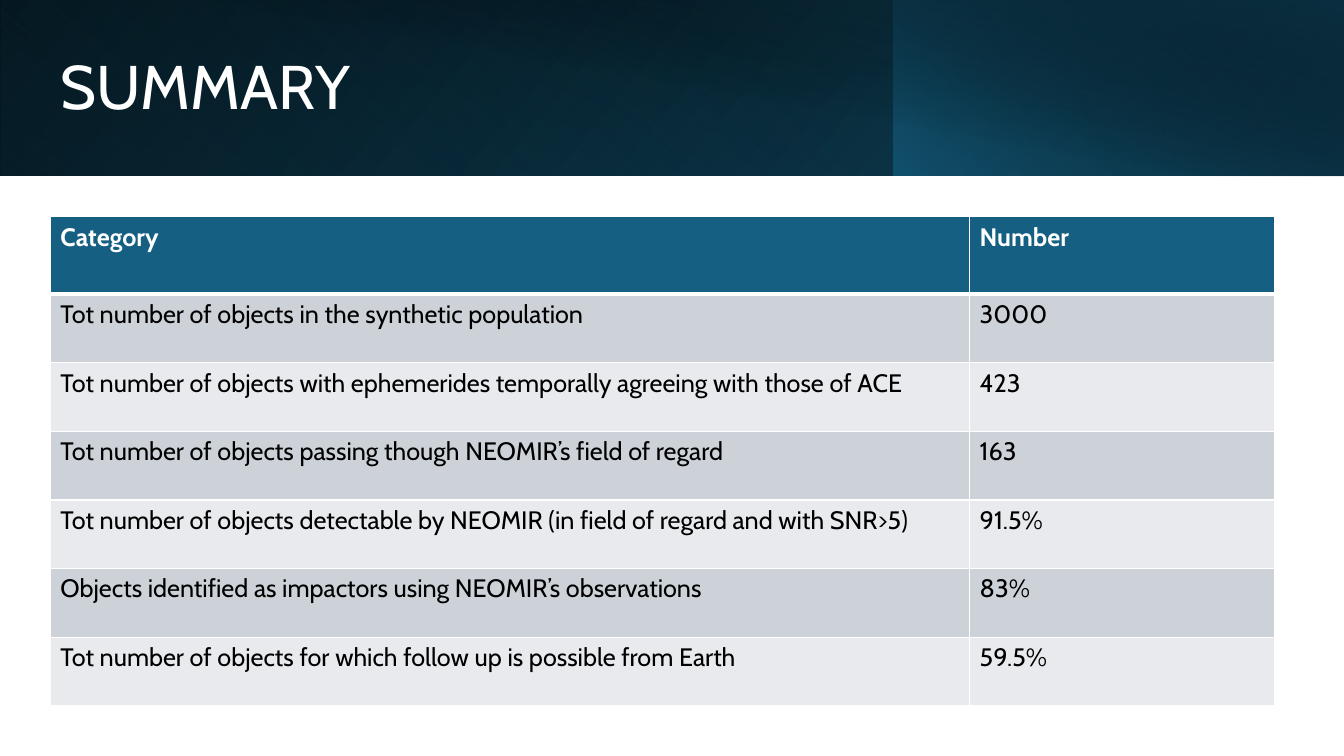
from dataclasses import dataclass

from lxml.etree import SubElement
from pptx import Presentation
from pptx.dml.color import RGBColor
from pptx.enum.shapes import MSO_SHAPE
from pptx.enum.text import MSO_ANCHOR, MSO_AUTO_SIZE, PP_ALIGN
from pptx.oxml.ns import qn
from pptx.slide import Slide
from pptx.table import _Cell
from pptx.text.text import _Paragraph
from pptx.util import Pt

FONT = "Cabin"
WHITE = RGBColor(0xFF, 0xFF, 0xFF)
BLACK = RGBColor(0x00, 0x00, 0x00)
TEAL = RGBColor(0x15, 0x60, 0x82)
DEEP = RGBColor(0x10, 0x48, 0x62)
NAVY = RGBColor(0x0B, 0x30, 0x41)
GRAY = RGBColor(0xCC, 0xD2, 0xD8)
PALE = RGBColor(0xE8, 0xEA, 0xED)


@dataclass
class Stop:
    place: int
    color: RGBColor
    alpha: int = 100


@dataclass
class Band:
    left: float
    width: float
    height: float
    angle: int
    stops: tuple[Stop, Stop]
    turn: int = 0
    flip: bool = True


@dataclass
class Row:
    label: str
    value: str


BANDS = [
    Band(0, 960, 125.3, 140, (Stop(0, BLACK), Stop(100, DEEP))),
    Band(0, 639.4, 125.3, 230, (Stop(20, TEAL, 0), Stop(100, NAVY, 55)), turn=180),
    Band(638.6, 321.4, 125.3, 220, (Stop(0, TEAL, 66), Stop(100, BLACK, 30))),
    Band(36, 924, 126, 280, (Stop(50, BLACK, 0), Stop(99, NAVY, 52)), flip=False),
]

ROWS = [
    Row("Category", "Number"),
    Row("Tot number of objects in the synthetic population", "3000"),
    Row("Tot number of objects with ephemerides temporally agreeing with those of ACE", "423"),
    Row("Tot number of objects passing though NEOMIR’s field of regard", "163"),
    Row("Tot number of objects detectable by NEOMIR (in field of regard and with SNR>5)", "91.5%"),
    Row("Objects identified as impactors using NEOMIR’s observations", "83%"),
    Row("Tot number of objects for which follow up is possible from Earth", "59.5%"),
]


def style(para: _Paragraph, size: int, color: RGBColor, bold: bool = False) -> None:
    for run in para.runs:
        run.font.name = FONT
        run.font.size = Pt(size)
        run.font.bold = bold
        run.font.color.rgb = color


def draw_band(slide: Slide, band: Band) -> None:
    shape = slide.shapes.add_shape(
        MSO_SHAPE.RECTANGLE, Pt(band.left), 0, Pt(band.width), Pt(band.height))
    shape.shadow.inherit = False
    shape.line.fill.background()
    shape.rotation = band.turn
    props = shape.element.spPr
    if band.flip:
        props.find(qn("a:xfrm")).set("flipH", "1")

    # Gradient with opacity at each stop
    grad = props.makeelement(qn("a:gradFill"), {"rotWithShape": "1"})
    props.find(qn("a:prstGeom")).addnext(grad)
    stops = SubElement(grad, qn("a:gsLst"))
    for stop in band.stops:
        node = SubElement(stops, qn("a:gs"), pos=str(stop.place * 1000))
        color = SubElement(node, qn("a:srgbClr"), val=str(stop.color))
        SubElement(color, qn("a:alpha"), val=str(stop.alpha * 1000))
    SubElement(grad, qn("a:lin"), ang=str(band.angle * 60000), scaled="0")


def draw_title(slide: Slide, text: str) -> None:
    title = slide.shapes.title
    title.left, title.top = Pt(36), Pt(23)
    title.width, title.height = Pt(851), Pt(81.4)
    frame = title.text_frame
    frame.text = text
    frame.auto_size = MSO_AUTO_SIZE.NONE
    frame.vertical_anchor = MSO_ANCHOR.MIDDLE
    para = frame.paragraphs[0]
    para.alignment = PP_ALIGN.LEFT
    para.line_spacing = 0.9
    style(para, 44, WHITE)
    # Bring the title in front of the bands
    title.element.getparent().append(title.element)


def draw_edges(cell: _Cell, head: bool) -> None:
    edges = {"lnL": 1, "lnR": 1, "lnT": 1, "lnB": 3} if head else {"lnL": 1, "lnR": 1, "lnB": 1}
    props = cell._tc.get_or_add_tcPr()
    for side, width in edges.items():
        line = SubElement(props, qn(f"a:{side}"), w=str(Pt(width)))
        fill = SubElement(line, qn("a:solidFill"))
        SubElement(fill, qn("a:srgbClr"), val=str(WHITE))


def draw_table(slide: Slide, rows: list[Row]) -> None:
    frame = slide.shapes.add_table(len(rows), 2, Pt(36), Pt(154.8), Pt(874.8), Pt(356.4))
    table = frame.table
    table.columns[0].width = Pt(656.6)
    table.columns[1].width = Pt(218.2)
    for index, row in enumerate(rows):
        head = index == 0
        table.rows[index].height = Pt(55.4 if head else 49)
        shade = TEAL if head else (PALE, GRAY)[index % 2]
        for cell, text in zip(table.rows[index].cells, (row.label, row.value)):
            draw_edges(cell, head)
            cell.fill.solid()
            cell.fill.fore_color.rgb = shade
            cell.text_frame.text = text
            style(cell.text_frame.paragraphs[0], 18, WHITE if head else BLACK, head)
    # The frame is a little taller than its rows
    frame.height = Pt(356.4)


def main() -> None:
    deck = Presentation()
    deck.slide_width, deck.slide_height = Pt(960), Pt(540)
    slide = deck.slides.add_slide(deck.slide_layouts[5])

    # Header
    for band in BANDS:
        draw_band(slide, band)
    draw_title(slide, "SUMMARY")

    # Results
    draw_table(slide, ROWS)
    deck.save("out.pptx")


if __name__ == "__main__":
    main()
